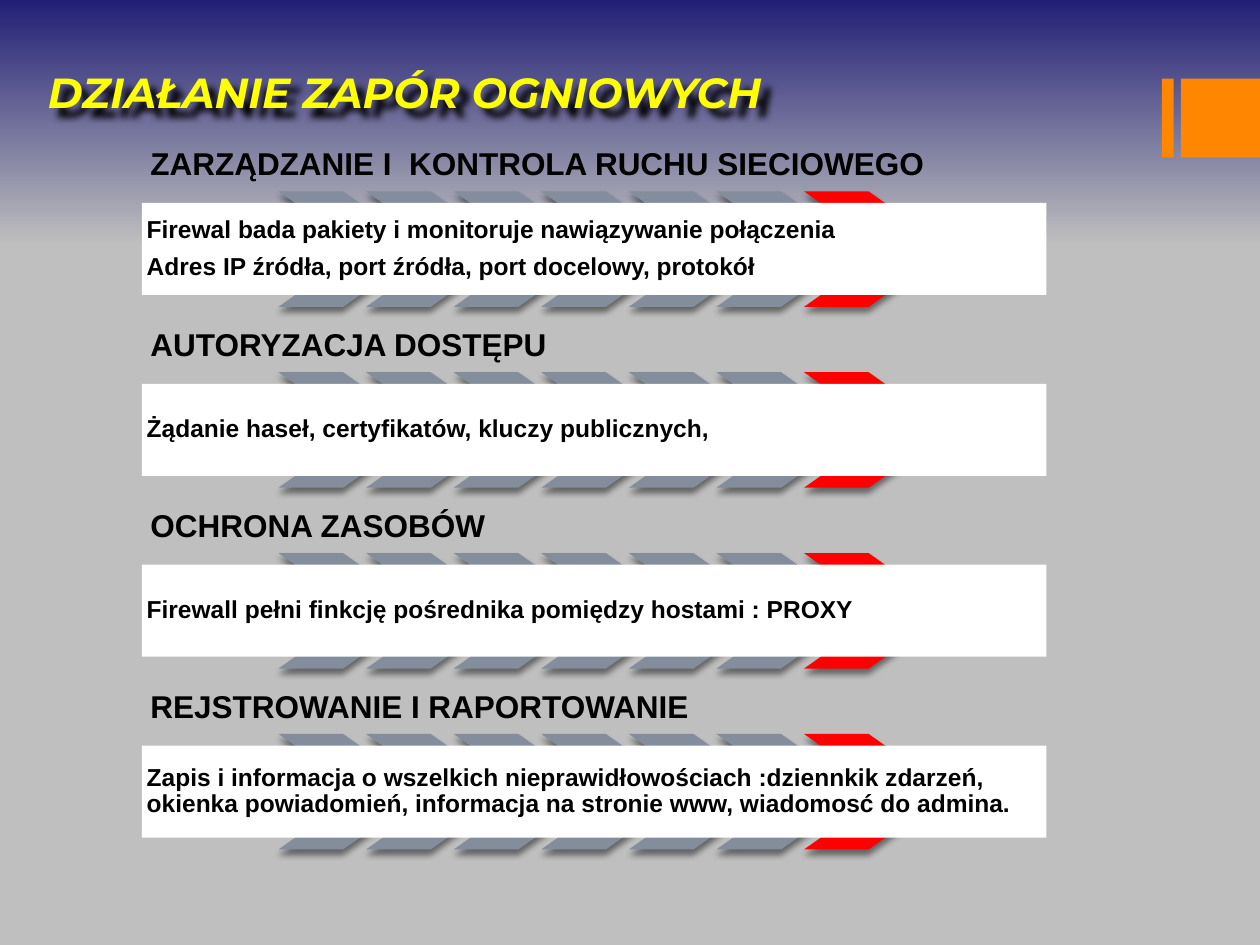
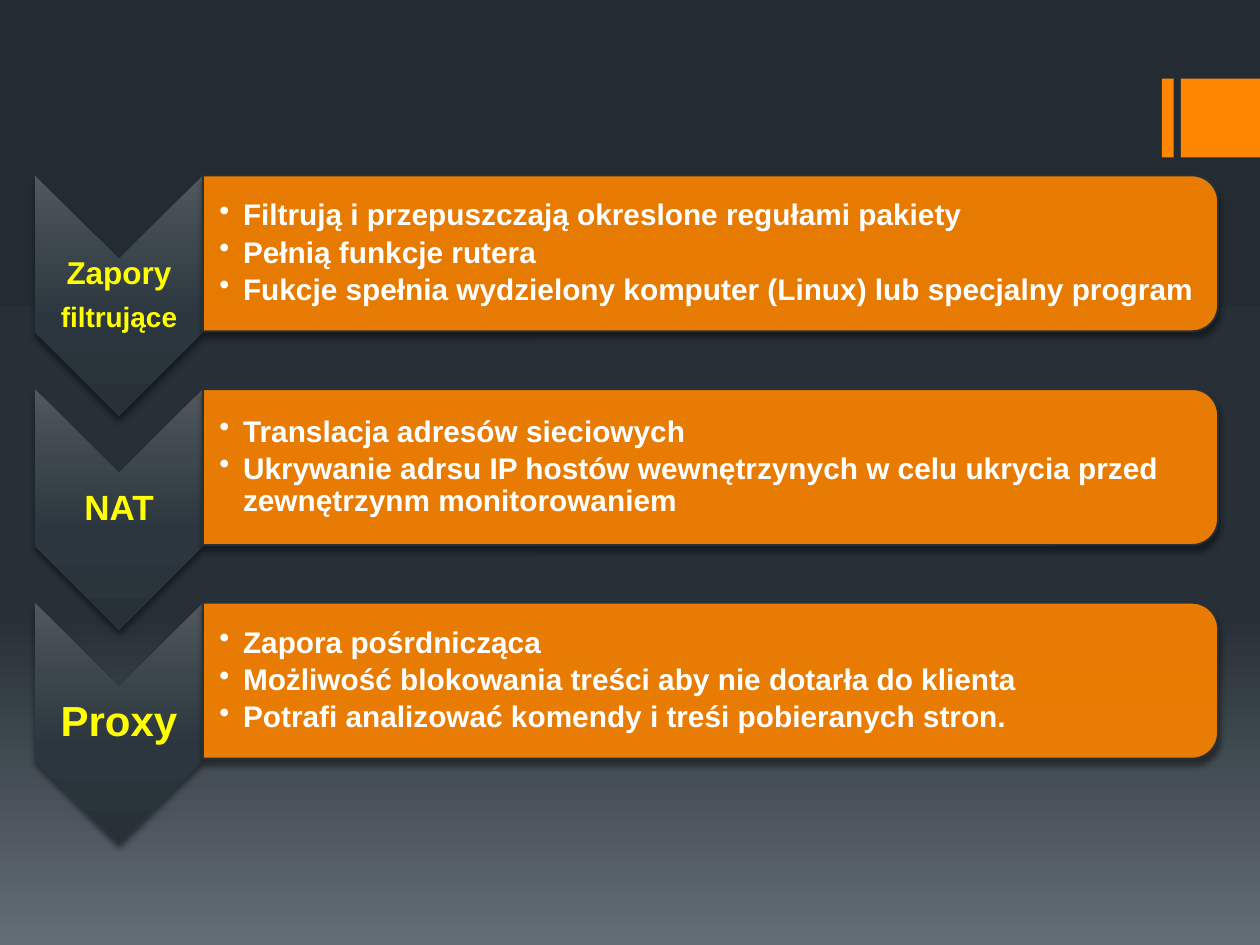
from dataclasses import dataclass

from lxml.etree import SubElement
from pptx import Presentation
from pptx.dml.color import RGBColor
from pptx.enum.shapes import MSO_SHAPE
from pptx.enum.text import MSO_ANCHOR, PP_ALIGN
from pptx.oxml.ns import qn
from pptx.util import Pt

TITLE = "DZIAŁANIE ZAPÓR OGNIOWYCH"

TASKS = [
    ("ZARZĄDZANIE I  KONTROLA RUCHU SIECIOWEGO",
     ["Firewal bada pakiety i monitoruje nawiązywanie połączenia",
      "Adres IP źródła, port źródła, port docelowy, protokół"]),
    ("AUTORYZACJA DOSTĘPU",
     ["Żądanie haseł, certyfikatów, kluczy publicznych,"]),
    ("OCHRONA ZASOBÓW",
     ["Firewall pełni finkcję pośrednika pomiędzy hostami : PROXY"]),
    ("REJSTROWANIE I RAPORTOWANIE",
     ["Zapis i informacja o wszelkich nieprawidłowościach :dziennkik zdarzeń, "
      "okienka powiadomień, informacja na stronie www, wiadomosć do admina."]),
]

FIREWALL_KINDS = [
    ([("Zapory", 18), ("filtrujące", 16)],
     ["Filtrują i przepuszczają okreslone regułami pakiety",
      "Pełnią funkcje rutera",
      "Fukcje spełnia wydzielony komputer (Linux) lub specjalny program"]),
    ([("NAT", 20)],
     ["Translacja adresów sieciowych",
      "Ukrywanie adrsu IP hostów wewnętrzynych w celu ukrycia przed "
      "zewnętrzynm monitorowaniem"]),
    ([("Proxy", 24)],
     ["Zapora pośrdnicząca",
      "Możliwość blokowania treści aby nie dotarła do klienta",
      "Potrafi analizować komendy i treśi pobieranych stron."]),
]


@dataclass(frozen=True)
class Theme:
    body_font: str = "Arial"
    title_font: str = "Montserrat"
    title_size: float = 24
    heading_size: float = 18
    detail_size: float = 14
    feature_size: float = 17
    accent: str = "FF8600"
    yellow: str = "FFFF00"
    white: str = "FFFFFF"
    black: str = "000000"
    steel: str = "838D9B"
    red: str = "FF0000"
    outline: str = "283138"
    blue_sky: tuple = ((0, "222076"), (26, "BFBFBF"))
    night: tuple = ((0, "242C33"), (65, "273037"), (100, "636D76"))
    arrow: tuple = ((0, "50575D"), (60, "2B363E"), (100, "283138"))


THEME = Theme()


def add_gradient(owner, stops):
    solid = next(owner.element.iter(qn("a:solidFill")))
    gradient = solid.makeelement(qn("a:gradFill"), {"rotWithShape": "0"})
    stop_list = SubElement(gradient, qn("a:gsLst"))
    for percent, color in stops:
        stop = SubElement(stop_list, qn("a:gs"), pos=str(percent * 1000))
        SubElement(stop, qn("a:srgbClr"), val=color)
    SubElement(gradient, qn("a:lin"), ang="5400000", scaled="0")
    solid.getparent().replace(solid, gradient)


def add_shadow(shape, blur=3.8, distance=3, degrees=90, opacity=48):
    shape.shadow.inherit = False
    effects = next(shape.element.iter(qn("a:effectLst")))
    shadow = SubElement(effects, qn("a:outerShdw"), blurRad=str(Pt(blur)),
                        dist=str(Pt(distance)), dir=str(degrees * 60000),
                        algn="ctr", rotWithShape="0")
    color = SubElement(shadow, qn("a:srgbClr"), val=THEME.black)
    SubElement(color, qn("a:alpha"), val=str(opacity * 1000))


def add_block(slide, kind, left, top, width, height, color, rotation=0):
    if rotation:
        left, top = left + (width - height) / 2, top + (height - width) / 2
        width, height = height, width
    block = slide.shapes.add_shape(kind, Pt(left), Pt(top), Pt(width), Pt(height))
    block.rotation = rotation
    block.shadow.inherit = False
    block.fill.solid()
    block.fill.fore_color.rgb = RGBColor.from_string(color)
    block.line.fill.background()
    return block


def add_box(slide, left, top, width, height):
    return slide.shapes.add_textbox(Pt(left), Pt(top), Pt(width), Pt(height))


def write(shape, lines, color, anchor, insets, gap=0.4,
          align=PP_ALIGN.LEFT, bulleted=False):
    frame = shape.text_frame
    frame.word_wrap = True
    frame.vertical_anchor = anchor
    (frame.margin_left, frame.margin_top,
     frame.margin_right, frame.margin_bottom) = map(Pt, insets)
    for index, (text, size) in enumerate(lines):
        paragraph = frame.add_paragraph() if index else frame.paragraphs[0]
        paragraph.text = text
        paragraph.alignment = align
        paragraph.line_spacing = 0.9
        paragraph.space_after = Pt(size * gap)
        if bulleted:
            properties = paragraph._p.get_or_add_pPr()
            properties.set("marL", str(Pt(13.5)))
            properties.set("indent", str(Pt(-13.5)))
            SubElement(properties, qn("a:buChar"), char="•")
        style(paragraph.font, THEME.body_font, size, color)


def style(font, name, size, color):
    font.name = name
    font.size = Pt(size)
    font.bold = True
    font.color.rgb = RGBColor.from_string(color)


def new_slide(deck, stops):
    slide = deck.slides.add_slide(deck.slide_layouts[6])
    slide.background.fill.solid()
    add_gradient(slide.background.fill and slide, stops)
    for left, width in ((664, 6.75), (674.75, 45.25)):
        add_block(slide, MSO_SHAPE.RECTANGLE, left, 45, width, 45, THEME.accent)
    return slide


def add_title(slide, text):
    title = add_box(slide, 20.2, 34.6, 440.6, 65.5)
    title.text_frame.word_wrap = True
    paragraph = title.text_frame.paragraphs[0]
    paragraph.text = text
    style(paragraph.font, THEME.title_font, THEME.title_size, THEME.yellow)
    paragraph.font.italic = True
    add_shadow(title, blur=4, distance=6.4, degrees=45, opacity=100)


def add_task(slide, top, heading, details):
    left = 81
    heading_box = add_box(slide, left, top, 587, 32.4)
    write(heading_box, [(heading, THEME.heading_size)], THEME.black,
          MSO_ANCHOR.BOTTOM, (5, 5, 5, 5))
    for color_index, color in enumerate([THEME.steel] * 6 + [THEME.red]):
        chevron = add_block(slide, MSO_SHAPE.CHEVRON, 159.2 + 50.05 * color_index,
                            top + 32.4, 83.5, 66, color)
        chevron.adjustments[0] = 0.706
        add_shadow(chevron)
    panel = add_block(slide, MSO_SHAPE.RECTANGLE, left, top + 39, 517, 52.6, THEME.white)
    write(panel, [(detail, THEME.detail_size) for detail in details],
          THEME.black, MSO_ANCHOR.MIDDLE, (2.8, 2.8, 2.8, 2.8))


def add_firewall_kind(slide, top, label, features):
    left, arrow_width, arrow_height, bar_height = 20, 96, 137.5, 89
    arrow = add_block(slide, MSO_SHAPE.CHEVRON, left, top, arrow_width,
                      arrow_height, THEME.outline, rotation=90)
    add_gradient(arrow, THEME.arrow)
    add_shadow(arrow)
    label_box = add_box(slide, left, top + 48, arrow_width, 41)
    write(label_box, label, THEME.yellow, MSO_ANCHOR.MIDDLE, (1, 1, 1, 1),
          align=PP_ALIGN.CENTER)

    bar_left = left + arrow_width
    bar = add_block(slide, MSO_SHAPE.ROUND_2_SAME_RECTANGLE, bar_left, top, 580,
                    bar_height, THEME.accent, rotation=90)
    bar_color = next(bar.element.iter(qn("a:srgbClr")))
    SubElement(bar_color, qn("a:alpha"), val="90000")
    bar.line.color.rgb = RGBColor.from_string(THEME.outline)
    bar.line.width = Pt(1)
    add_shadow(bar)
    feature_box = add_box(slide, bar_left, top + 4.2, 576, 80.6)
    write(feature_box, [(feature, THEME.feature_size) for feature in features],
          THEME.white, MSO_ANCHOR.MIDDLE, (9.4, 0.7, 0.7, 0.7),
          gap=0.17, bulleted=True)


def main():
    deck = Presentation()
    deck.slide_width, deck.slide_height = Pt(720), Pt(540)

    operation = new_slide(deck, THEME.blue_sky)
    add_title(operation, TITLE)
    for row, (heading, details) in enumerate(TASKS):
        add_task(operation, 77 + 103.35 * row, heading, details)

    kinds = new_slide(deck, THEME.night)
    for row, (label, features) in enumerate(FIREWALL_KINDS):
        add_firewall_kind(kinds, 100.3 + 122.1 * row, label, features)

    deck.save("out.pptx")


if __name__ == "__main__":
    main()
